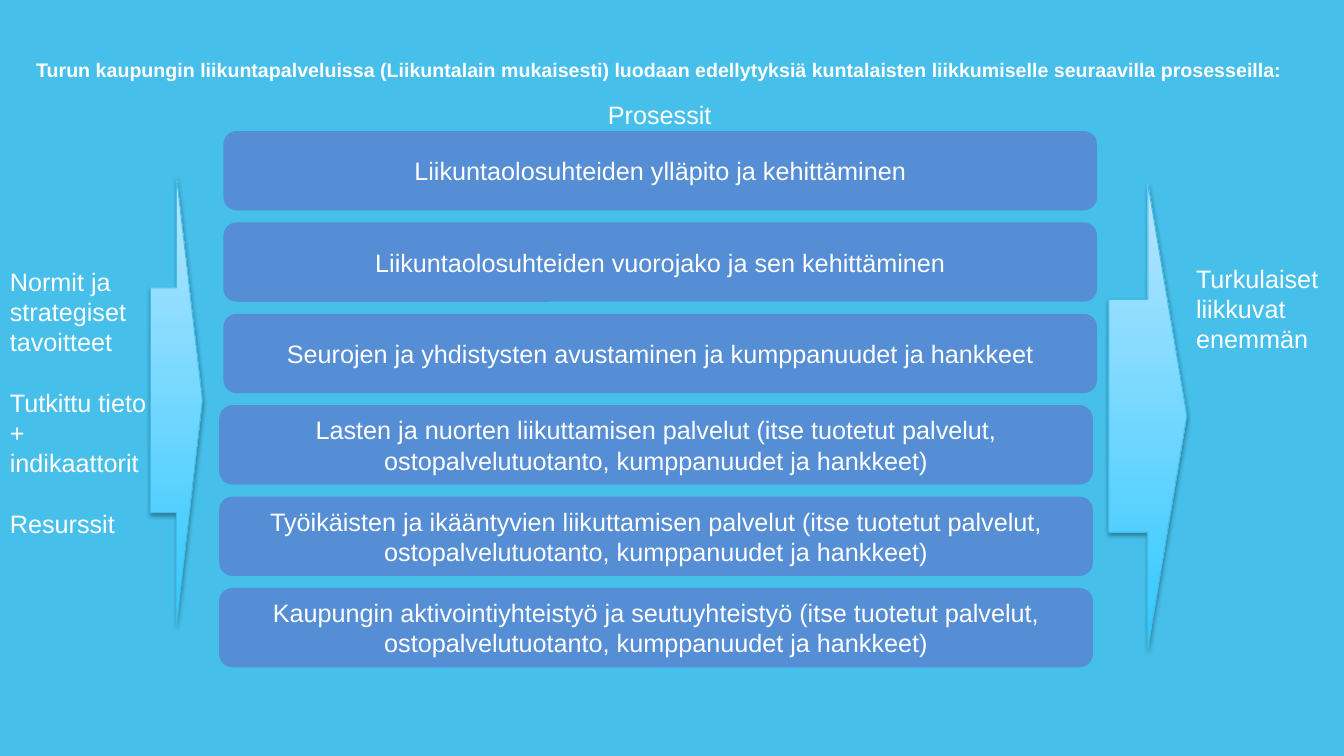
from dataclasses import dataclass

from lxml.etree import SubElement
from pptx import Presentation
from pptx.dml.color import RGBColor as Rgb
from pptx.enum.shapes import MSO_SHAPE as Preset
from pptx.enum.text import MSO_ANCHOR as Anchor, PP_ALIGN as Align
from pptx.oxml.ns import qn
from pptx.util import Inches, Pt

COLUMNS, ROWS = 160, 90
SLIDE_WIDTH, SLIDE_HEIGHT = Inches(13.333), Inches(7.5)


@dataclass(frozen=True)
class Theme:
    font: str = "Arial"
    title_size: int = 14
    body_size: int = 18
    background: str = "46BFEA"
    text: str = "FFFFFF"
    process: str = "558ED5"
    arrow_bottom: str = "31C9FF"
    arrow_top: str = "B7E5FF"
    arrow_line: str = "40BDE9"
    shadow: str = "000000"


THEME = Theme()

TITLE = ("Turun kaupungin liikuntapalveluissa (Liikuntalain mukaisesti) luodaan "
         "edellytyksiä kuntalaisten liikkumiselle seuraavilla prosesseilla:")
SERVICE_MEANS = "(itse tuotetut palvelut, ostopalvelutuotanto, kumppanuudet ja hankkeet)"
CONDITIONS = [
    "Liikuntaolosuhteiden ylläpito ja kehittäminen",
    "Liikuntaolosuhteiden vuorojako ja sen kehittäminen",
    "Seurojen ja yhdistysten avustaminen ja kumppanuudet ja hankkeet",
]
SERVICES = [
    "Lasten ja nuorten liikuttamisen palvelut",
    "Työikäisten ja ikääntyvien liikuttamisen palvelut",
    "Kaupungin aktivointiyhteistyö ja seutuyhteistyö",
]
INPUTS = ["Normit ja strategiset tavoitteet", "Tutkittu tieto + indikaattorit", "Resurssit"]
OUTCOME = ["Turkulaiset", "liikkuvat enemmän"]

PROCESS_TOP, PROCESS_PITCH = 15.6, 10.88
PROCESS_WIDTH, PROCESS_HEIGHT = 104, 9.45
CONDITION_LEFT, SERVICE_LEFT = 26.6, 26.1


def place(left, top, width, height):
    """Turn grid columns and rows into slide lengths."""
    column, row = SLIDE_WIDTH / COLUMNS, SLIDE_HEIGHT / ROWS
    return [int(n) for n in (left * column, top * row, width * column, height * row)]


def write(shape, lines, size=THEME.body_size, bold=False, align=Align.LEFT,
          anchor=Anchor.TOP, wrap=True, gap=0, line_height=None):
    frame = shape.text_frame
    frame.word_wrap = wrap
    frame.vertical_anchor = anchor
    for index, line in enumerate(lines):
        para = frame.add_paragraph() if index else frame.paragraphs[0]
        para.alignment = align
        if index and gap:
            para.space_before = Pt(gap)
        if line_height:
            para.line_spacing = Pt(line_height)
        span = para.add_run()
        span.text = line
        font = span.font
        font.name, font.size, font.bold = THEME.font, Pt(size), bold
        font.color.rgb = Rgb.from_string(THEME.text)


def add_text(page, area, lines, **text_format):
    box = page.shapes.add_textbox(*place(*area))
    write(box, lines, **text_format)
    return box


def add_title(page):
    box = add_text(page, (4.3, 3.5, 155.5, 6.2), [TITLE], size=THEME.title_size,
                   bold=True, anchor=Anchor.BOTTOM, line_height=44)
    frame = box.text_frame
    frame.margin_left = frame.margin_right = frame.margin_top = frame.margin_bottom = 0


def add_process(page, index, left, label):
    top = PROCESS_TOP + index * PROCESS_PITCH
    box = page.shapes.add_shape(Preset.ROUNDED_RECTANGLE,
                                *place(left, top, PROCESS_WIDTH, PROCESS_HEIGHT))
    box.shadow.inherit = False
    box.fill.solid()
    box.fill.fore_color.rgb = Rgb.from_string(THEME.process)
    box.line.fill.background()
    write(box, [label], align=Align.CENTER, anchor=Anchor.MIDDLE)


def add_drop_shadow(shape):
    shape.shadow.inherit = False
    effects = shape.element.spPr.find(qn("a:effectLst"))
    shadow = SubElement(effects, qn("a:outerShdw"), blurRad=str(Pt(3.1)),
                        dist=str(Pt(1.8)), dir="5400000", rotWithShape="0")
    color = SubElement(shadow, qn("a:srgbClr"), val=THEME.shadow)
    SubElement(color, qn("a:alpha"), val="35000")


def add_arrow(page, area):
    arrow = page.shapes.add_shape(Preset.RIGHT_ARROW, *place(*area))
    arrow.fill.gradient()
    arrow.fill.gradient_angle = 90
    for stop, color in zip(arrow.fill.gradient_stops, (THEME.arrow_bottom, THEME.arrow_top)):
        stop.color.rgb = Rgb.from_string(color)
    first, last = arrow.fill.gradient_stops
    first.position, last.position = 0, 1
    arrow.line.color.rgb = Rgb.from_string(THEME.arrow_line)
    arrow.line.width = Pt(0.75)
    add_drop_shadow(arrow)


def main():
    deck = Presentation()
    deck.slide_width, deck.slide_height = SLIDE_WIDTH, SLIDE_HEIGHT
    page = deck.slides.add_slide(deck.slide_layouts[6])
    page.background.fill.solid()
    page.background.fill.fore_color.rgb = Rgb.from_string(THEME.background)

    add_title(page)
    add_text(page, (71.2, 11.2, 14.9, 4.8), ["Prosessit"], wrap=False)
    for index, label in enumerate(CONDITIONS):
        add_process(page, index, CONDITION_LEFT, label)
    for index, label in enumerate(SERVICES, start=len(CONDITIONS)):
        add_process(page, index, SERVICE_LEFT, f"{label} {SERVICE_MEANS}")
    add_text(page, (0, 31.1, 19.4, 34), INPUTS, gap=21.6)
    add_text(page, (141.2, 30.7, 18.8, 12.1), OUTCOME)
    add_arrow(page, (132, 21.8, 9.3, 55.4))
    add_arrow(page, (17.9, 20.9, 6.2, 53.5))
    deck.save("out.pptx")


if __name__ == "__main__":
    main()


if False:
    pass
